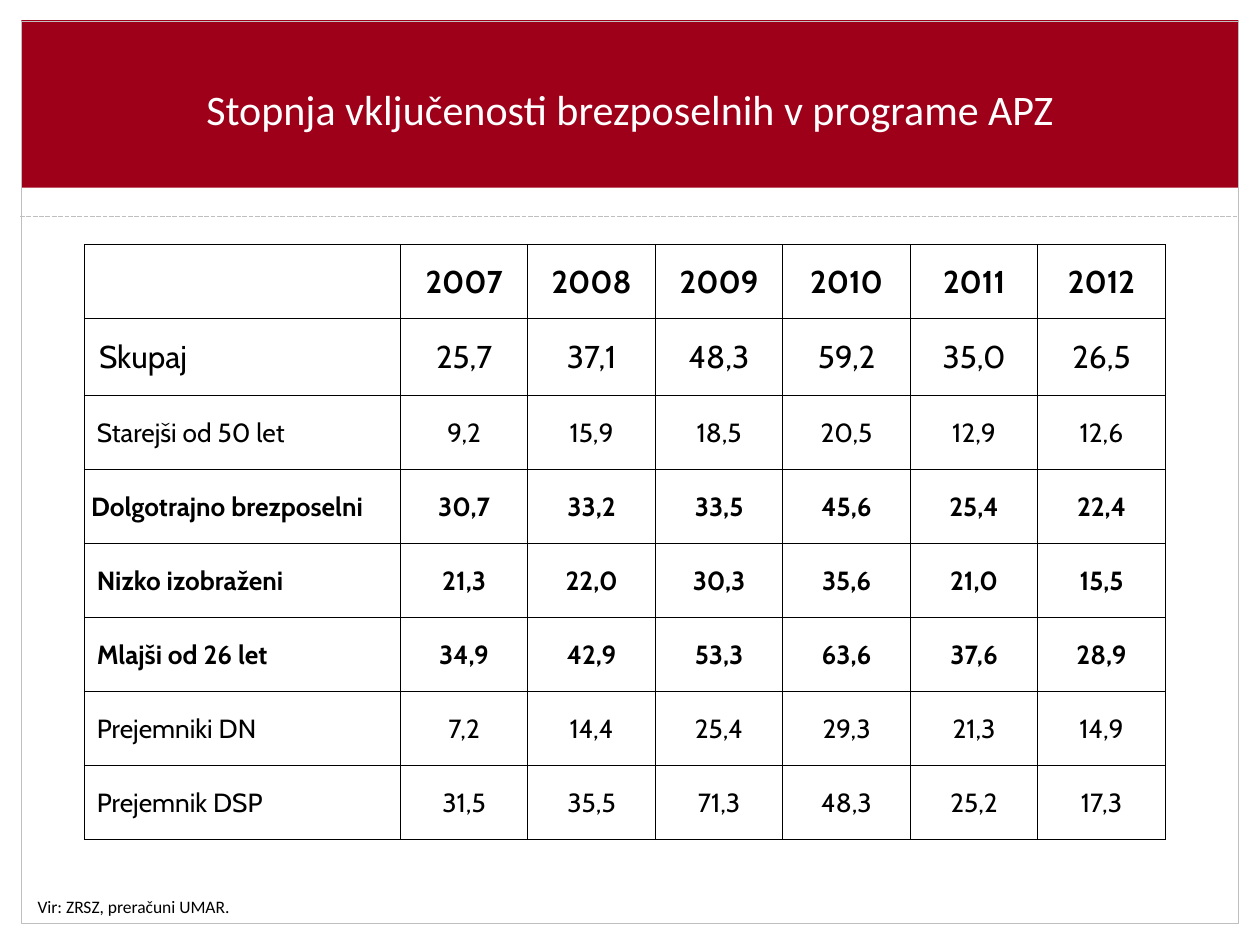
from dataclasses import dataclass
from typing import Optional

import pptx
import pptx.dml.color
import pptx.enum.dml
import pptx.enum.shapes
import pptx.enum.text
import pptx.oxml
import pptx.oxml.ns
import pptx.util

Pt = pptx.util.Pt
ALIGN = pptx.enum.text.PP_ALIGN
MIDDLE = pptx.enum.text.MSO_ANCHOR.MIDDLE

COLORS = {"white": "FFFFFF", "red": "9E001A", "grey": "BFBFBF", "black": "000000"}


@dataclass
class Panel:
    left: float
    top: float
    width: float
    height: float
    fill: Optional[str] = None
    line: Optional[str] = None


@dataclass
class Row:
    label: str
    values: str
    size: float = 15
    bold: bool = False
    indent: float = 7.2
    height: float = 42.3


PANELS = [
    Panel(0, 527.8, 720, 12.2, "white"),      # bottom margin
    Panel(0, 0, 720, 12.2, "white"),          # top margin
    Panel(708.5, 0, 11.5, 538.6, "white"),    # right margin
    Panel(11.5, 101.5, 695.5, 23.8, "white"), # strip below the title
    Panel(12.2, 11.5, 695.5, 95.8, "red"),    # title band
]
FRAME = Panel(12.2, 12.2, 695.5, 515.5, line="grey")

ROWS = [
    Row("", "2007 2008 2009 2010 2011 2012", size=18, bold=True),
    Row("Skupaj", "25,7 37,1 48,3 59,2 35,0 26,5", size=18, indent=8.4, height=44),
    Row("Starejši od 50 let", "9,2 15,9 18,5 20,5 12,9 12,6"),
    Row("Dolgotrajno brezposelni", "30,7 33,2 33,5 45,6 25,4 22,4", bold=True, indent=3.9),
    Row("Nizko izobraženi", "21,3 22,0 30,3 35,6 21,0 15,5", bold=True),
    Row("Mlajši od 26 let", "34,9 42,9 53,3 63,6 37,6 28,9", bold=True),
    Row("Prejemniki DN", "7,2 14,4 25,4 29,3 21,3 14,9"),
    Row("Prejemnik DSP", "31,5 35,5 71,3 48,3 25,2 17,3"),
]
LABEL_WIDTH, YEAR_WIDTH = 180.6, 72.86


def rgb(name: str) -> pptx.dml.color.RGBColor:
    return pptx.dml.color.RGBColor.from_string(COLORS[name])


def format_text(p, font: str, size: float, color: str, bold: bool = False) -> None:
    for r in p.runs:
        r.font.name = font
        r.font.size = Pt(size)
        r.font.bold = bold
        r.font.color.rgb = rgb(color)


def add_panel(s, panel: Panel) -> None:
    sp = s.shapes.add_shape(
        pptx.enum.shapes.MSO_SHAPE.RECTANGLE,
        Pt(panel.left), Pt(panel.top), Pt(panel.width), Pt(panel.height))
    sp.shadow.inherit = False
    if panel.fill:
        sp.fill.solid()
        sp.fill.fore_color.rgb = rgb(panel.fill)
    else:
        sp.fill.background()
    if panel.line:
        sp.line.color.rgb = rgb(panel.line)
        sp.line.width = Pt(0.75)
    else:
        sp.line.fill.background()


def add_divider(s, left: float, right: float, y: float) -> None:
    line = s.shapes.add_connector(
        pptx.enum.shapes.MSO_CONNECTOR.STRAIGHT, Pt(left), Pt(y), Pt(right), Pt(y))
    line.line.color.rgb = rgb("grey")
    line.line.width = Pt(0.9)
    line.line.dash_style = pptx.enum.dml.MSO_LINE.SQUARE_DOT
    effects = pptx.oxml.parse_xml(f"<a:effectLst {pptx.oxml.ns.nsdecls('a')}/>")
    line._element.spPr.append(effects)


def add_text(s, text: str, box: Panel, size: float, color: str, align=ALIGN.LEFT):
    sp = s.shapes.add_textbox(Pt(box.left), Pt(box.top), Pt(box.width), Pt(box.height))
    tf = sp.text_frame
    tf.word_wrap = True
    tf.text = text
    p = tf.paragraphs[0]
    p.alignment = align
    format_text(p, "Calibri", size, color)
    return tf


def add_borders(cell) -> None:
    tc_pr = cell._tc.get_or_add_tcPr()
    for side in ("lnL", "lnR", "lnT", "lnB"):
        tc_pr.append(pptx.oxml.parse_xml(
            f"<a:{side} {pptx.oxml.ns.nsdecls('a')} w='{Pt(0.5)}'><a:solidFill>"
            f"<a:srgbClr val='{COLORS['black']}'/></a:solidFill></a:{side}>"))


def fill_cell(cell, text: str, row: Row, is_label: bool) -> None:
    add_borders(cell)
    cell.fill.background()
    cell.vertical_anchor = MIDDLE
    cell.margin_left = Pt(row.indent if is_label else 0.7)
    cell.margin_right = cell.margin_top = Pt(0.7)
    cell.margin_bottom = Pt(0)
    cell.text = text
    p = cell.text_frame.paragraphs[0]
    p.alignment = ALIGN.LEFT if is_label else ALIGN.CENTER
    format_text(p, "Cabin", row.size, "black", row.bold)


def add_rates_table(s, left: float, top: float, rows: list[Row]) -> None:
    years = len(rows[0].values.split())
    table = s.shapes.add_table(
        len(rows), years + 1, Pt(left), Pt(top),
        Pt(LABEL_WIDTH + years * YEAR_WIDTH), Pt(sum(row.height for row in rows))).table
    table.first_row = table.horz_banding = False
    for i, column in enumerate(table.columns):
        column.width = Pt(YEAR_WIDTH if i else LABEL_WIDTH)
    for i, row in enumerate(rows):
        table.rows[i].height = Pt(row.height)
        for j, text in enumerate([row.label, *row.values.split()]):
            fill_cell(table.cell(i, j), text, row, j == 0)


def main() -> None:
    prs = pptx.Presentation()
    prs.slide_width, prs.slide_height = Pt(720), Pt(540)
    s = prs.slides.add_slide(prs.slide_layouts[6])

    # Background bands, divider and frame
    for panel in PANELS:
        add_panel(s, panel)
    add_divider(s, 11.5, 707, 123.8)
    add_panel(s, FRAME)

    # Title and source note
    title = add_text(s, "Stopnja vključenosti brezposelnih v programe APZ",
                     Panel(28.1, 28.1, 663.8, 67.7), 24, "white", ALIGN.CENTER)
    title.vertical_anchor = MIDDLE
    note = add_text(s, "Vir: ZRSZ, preračuni UMAR.",
                    Panel(14.4, 508.3, 590.4, 19.4), 10, "black")
    note.auto_size = pptx.enum.text.MSO_AUTO_SIZE.SHAPE_TO_FIT_TEXT

    # Inclusion rates by group and year
    add_rates_table(s, 48.2, 139.7, ROWS)

    prs.save("out.pptx")


if __name__ == "__main__":
    main()
